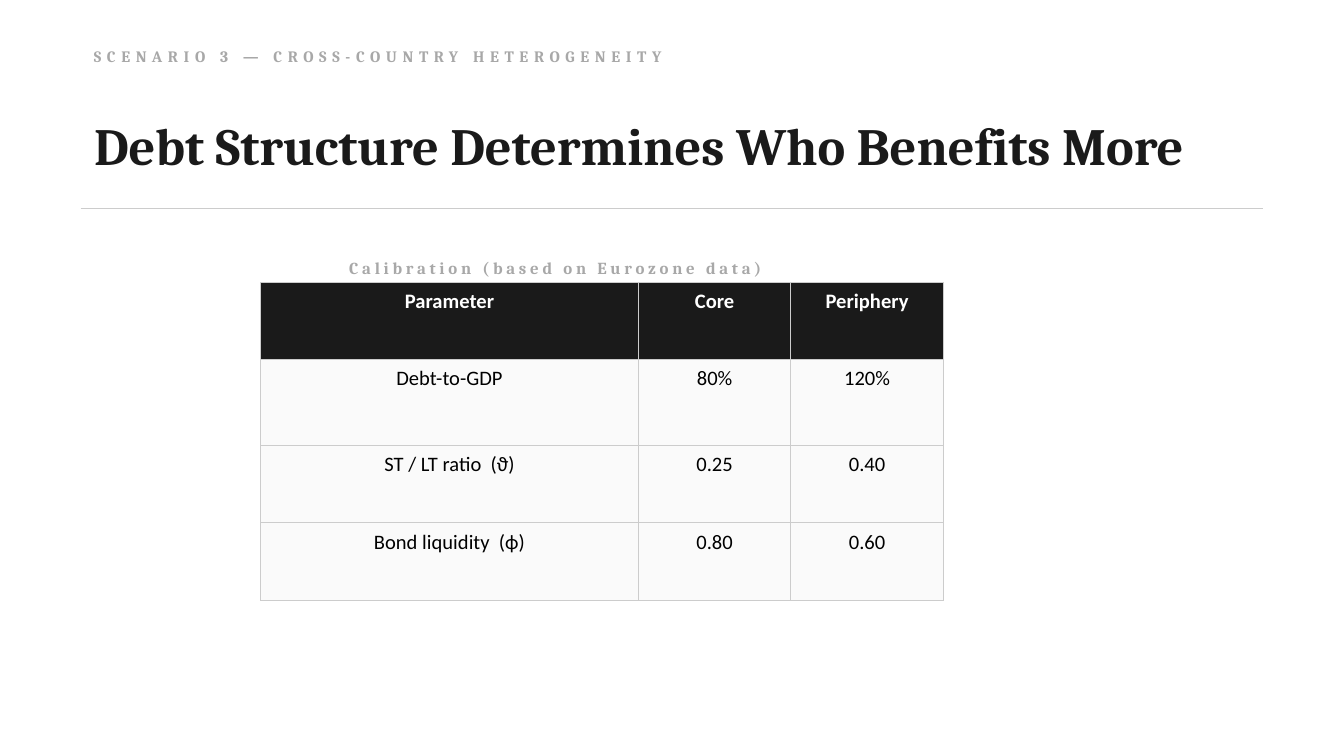
from lxml import etree
from pptx import Presentation
from pptx import util as u
from pptx.dml.color import RGBColor
from pptx.enum import shapes, text
from pptx.oxml.ns import qn

HUES = {"ink": "1A1A1A", "mute": "A8A8A8", "rule": "CCCCCC",
        "pale": "FAFAFA", "white": "FFFFFF", "black": "000000"}
UNIT = 0.1
LEFT, RIGHT = 6, 94
HEAD = {"name": "Cambria", "bold": True}
BODY = {"name": "Calibri", "size": u.Pt(11)}
WIDTHS = [28.1, 11.35, 11.35]
HEIGHTS = [5.75, 6.4, 5.75, 5.75]
ROWS = [
    ["Parameter", "Core", "Periphery"],
    ["Debt-to-GDP", "80%", "120%"],
    ["ST / LT ratio  (ϑ)", "0.25", "0.40"],
    ["Bond liquidity  (ϕ)", "0.80", "0.60"],
]


def grid(*cells):
    return [u.Inches(n * UNIT) for n in cells]


def color(hue):
    return RGBColor.from_string(HUES[hue])


def style(font, hue, form):
    for key, value in form.items():
        setattr(font, key, value)
    font.color.rgb = color(hue)


def write(frame, words, hue, form, align=text.PP_ALIGN.LEFT):
    para = frame.paragraphs[0]
    para.alignment = align
    run = para.add_run()
    run.text = words
    style(run.font, hue, form)
    return run


def title(slide, words, area):
    shape = slide.shapes.title
    shape.left, shape.top, shape.width, shape.height = grid(*area)
    frame = shape.text_frame
    frame.word_wrap = True
    frame.auto_size = text.MSO_AUTO_SIZE.NONE
    frame.vertical_anchor = text.MSO_ANCHOR.MIDDLE
    write(frame, words, "ink", {**HEAD, "size": u.Pt(28)})


def label(slide, words, area, size, gap):
    frame = slide.shapes.add_textbox(*grid(*area)).text_frame
    frame.word_wrap = True
    frame.vertical_anchor = text.MSO_ANCHOR.MIDDLE
    run = write(frame, words, "mute", {**HEAD, "size": u.Pt(size)})
    run.font._element.set("spc", str(gap * 100))


def rule(slide, top):
    line = slide.shapes.add_connector(
        shapes.MSO_CONNECTOR.STRAIGHT, *grid(LEFT, top, RIGHT, top))
    line.line.color.rgb = color("rule")
    line.line.width = u.Pt(0.75)
    etree.SubElement(line._element.spPr, qn("a:effectLst"))


def border(cell):
    props = cell._tc.get_or_add_tcPr()
    for spot, side in enumerate("LRTB"):
        edge = etree.Element(qn(f"a:ln{side}"), w=str(u.Pt(0.5)))
        fill = etree.SubElement(edge, qn("a:solidFill"))
        etree.SubElement(fill, qn("a:srgbClr"), val=HUES["rule"])
        props.insert(spot, edge)


def table(slide, left, top):
    area = grid(left, top, sum(WIDTHS), sum(HEIGHTS))
    body = slide.shapes.add_table(len(ROWS), len(WIDTHS), *area).table
    for col, width in zip(body.columns, grid(*WIDTHS)):
        col.width = width
    for row, height in zip(body.rows, grid(*HEIGHTS)):
        row.height = height
    for r, row in enumerate(ROWS):
        fill, hue = ("pale", "black") if r else ("ink", "white")
        for c, words in enumerate(row):
            cell = body.cell(r, c)
            cell.fill.solid()
            cell.fill.fore_color.rgb = color(fill)
            border(cell)
            write(cell.text_frame, words, hue, {**BODY, "bold": r == 0},
                  text.PP_ALIGN.CENTER)


def main():
    deck = Presentation()
    deck.slide_width, deck.slide_height = grid(100, 56.25)
    slide = deck.slides.add_slide(deck.slide_layouts[5])
    label(slide, "SCENARIO 3 — CROSS-COUNTRY HETEROGENEITY",
          (LEFT, 2.8, 90, 2.8), 8.5, 3)
    title(slide, "Debt Structure Determines Who Benefits More",
          (LEFT, 6.5, RIGHT - LEFT, 8.5))
    rule(slide, 15.5)
    label(slide, "Calibration (based on Eurozone data)",
          (25, 18.5, 38, 2.8), 9, 2)
    table(slide, 19.4, 21)
    deck.save("out.pptx")


if __name__ == "__main__":
    main()
